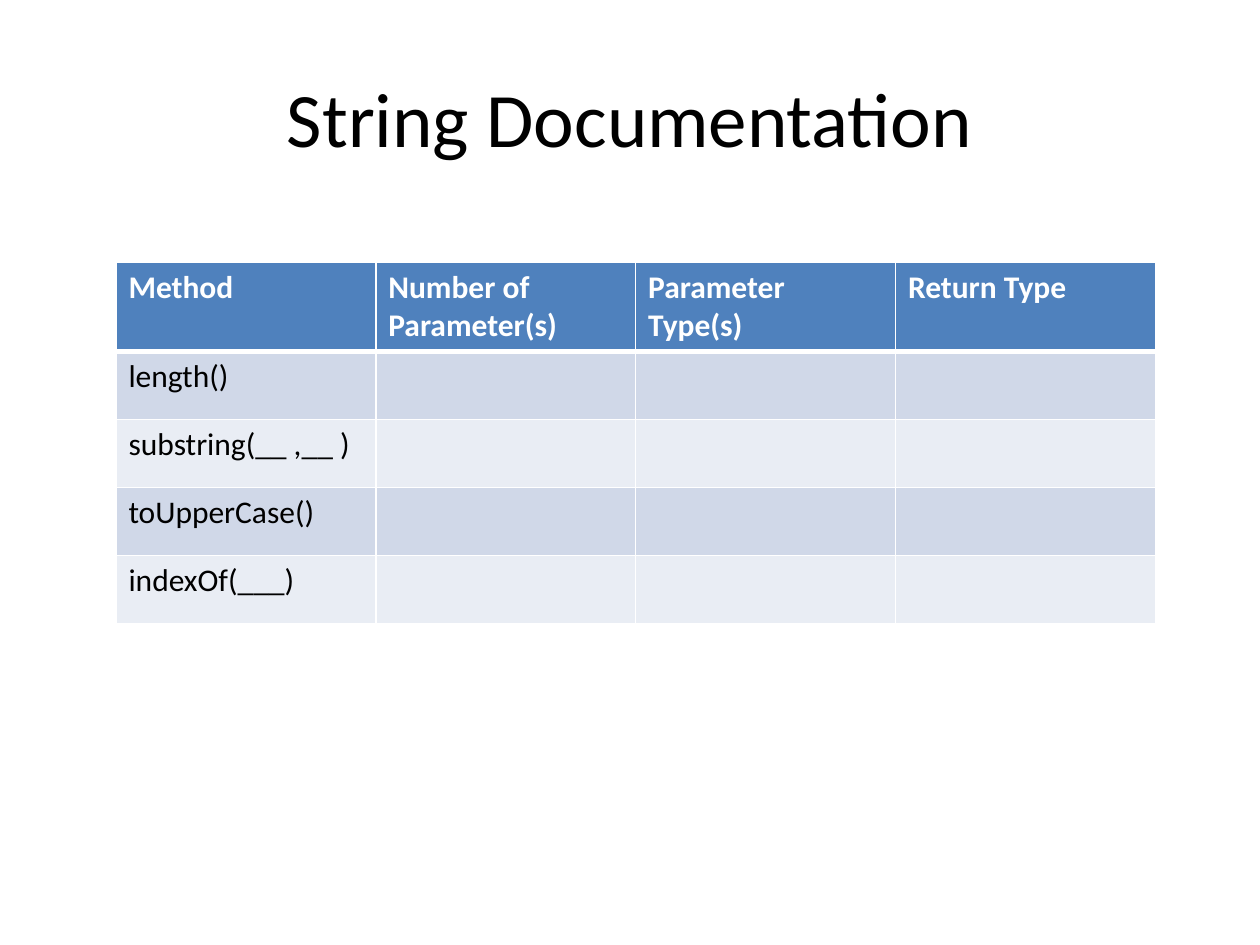
from lxml import etree
from pptx import Presentation
from pptx.dml.color import RGBColor
from pptx.enum import text
from pptx.oxml.ns import qn
from pptx.util import Inches, Pt

TITLE = "String Documentation"
HEADINGS = ["Method", "Number of Parameter(s)", "Parameter Type(s)", "Return Type"]
METHODS = ["length()", "substring(__ ,__ )", "toUpperCase()", "indexOf(___)"]

FONT = "Calibri"
BLACK, WHITE = "000000", "FFFFFF"
HEADER_FILL = "4F81BD"
BAND_FILLS = ["D0D8E8", "E9EDF4"]
LEFT, TOP, WIDTH = 0.92, 2.08, 8.25
HEADER_HEIGHT, ROW_HEIGHT = 0.71, 0.54


def rgb(color):
    return RGBColor.from_string(color)


def set_font(paragraph, size, color, bold=False):
    font = paragraph.font
    font.name, font.size, font.bold = FONT, Pt(size), bold
    font.color.rgb = rgb(color)


def add_borders(cell, widths):
    """Draw white borders; widths maps each side (L, R, T, B) to points."""
    properties = cell._tc.get_or_add_tcPr()
    for side, width in widths.items():
        line = etree.SubElement(properties, qn(f"a:ln{side}"), w=str(Pt(width)))
        fill = etree.SubElement(line, qn("a:solidFill"))
        etree.SubElement(fill, qn("a:srgbClr"), val=WHITE)


def add_title(slide):
    box = slide.shapes.add_textbox(Inches(0.5), Inches(0.3), Inches(9), Inches(1.25))
    frame = box.text_frame
    frame.word_wrap = True
    frame.vertical_anchor = text.MSO_ANCHOR.MIDDLE
    heading = frame.paragraphs[0]
    heading.text = TITLE
    heading.alignment = text.PP_ALIGN.CENTER
    set_font(heading, 44, BLACK)


def add_method_table(slide):
    blanks = [""] * (len(HEADINGS) - 1)
    rows = [HEADINGS] + [[method] + blanks for method in METHODS]
    height = HEADER_HEIGHT + ROW_HEIGHT * len(METHODS)
    table = slide.shapes.add_table(
        len(rows), len(HEADINGS),
        Inches(LEFT), Inches(TOP), Inches(WIDTH), Inches(height),
    ).table
    for r, row in enumerate(rows):
        header = r == 0
        table.rows[r].height = Inches(HEADER_HEIGHT if header else ROW_HEIGHT)
        for c, content in enumerate(row):
            cell = table.cell(r, c)
            cell.text = content
            set_font(cell.text_frame.paragraphs[0], 18,
                     WHITE if header else BLACK, bold=header)
            add_borders(cell, {"L": 1, "R": 1, "T": 3 if r == 1 else 1,
                               "B": 3 if header else 1})
            cell.fill.solid()
            cell.fill.fore_color.rgb = rgb(
                HEADER_FILL if header else BAND_FILLS[(r - 1) % 2])


def main():
    deck = Presentation()
    deck.slide_width, deck.slide_height = Inches(10), Inches(7.5)
    slide = deck.slides.add_slide(deck.slide_layouts[6])
    add_title(slide)
    add_method_table(slide)
    deck.save("out.pptx")


if __name__ == "__main__":
    main()
